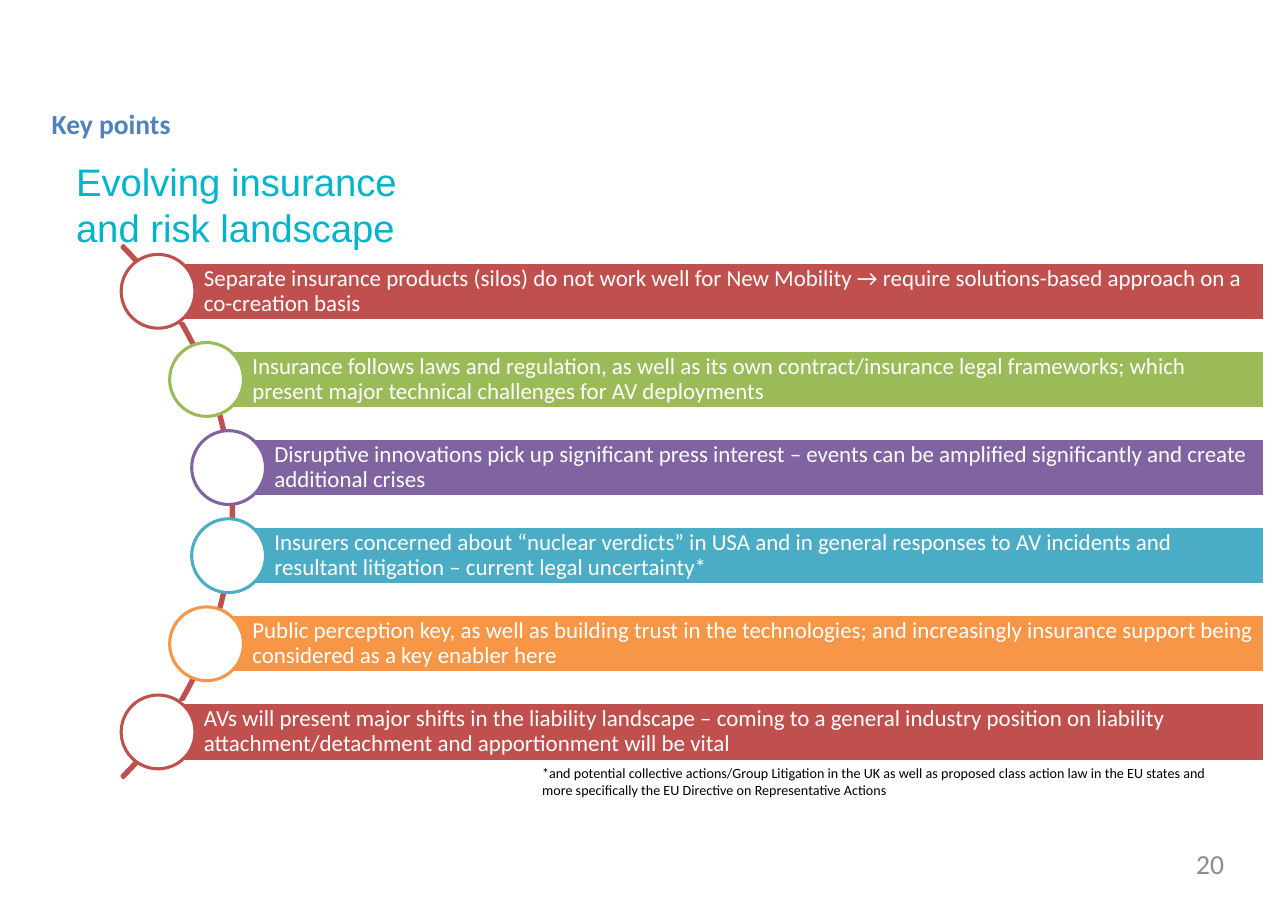
from pptx import Presentation
from pptx.dml.color import RGBColor
from pptx.enum.shapes import MSO_SHAPE
from pptx.enum.text import MSO_ANCHOR, PP_ALIGN
from pptx.util import Emu, Pt

SCALE = 9144
RED = "C0504D"
WHITE = "FFFFFF"
POINTS = [
    (0, RED, "Separate insurance products (silos) do not work well for New Mobility → require solutions-based approach on a co-creation basis"),
    (44, "9BBB59", "Insurance follows laws and regulation, as well as its own contract/insurance legal frameworks; which present major technical challenges for AV deployments"),
    (64, "8064A2", "Disruptive innovations pick up significant press interest – events can be amplified significantly and create additional crises"),
    (64, "4BACC6", "Insurers concerned about “nuclear verdicts” in USA and in general responses to AV incidents and resultant litigation – current legal uncertainty*"),
    (44, "F79646", "Public perception key, as well as building trust in the technologies; and increasingly insurance support being considered as a key enabler here"),
    (0, RED, "AVs will present major shifts in the liability landscape – coming to a general industry position on liability attachment/detachment and apportionment will be vital"),
]
NOTE = "*and potential collective actions/Group Litigation in the UK as well as proposed class action law in the EU states and more specifically the EU Directive on Representative Actions"


def px(count):
    """Turn px into EMU."""
    return Emu(count * SCALE)


def color(code):
    """Turn a hex string into a colour."""
    return RGBColor.from_string(code)


def write(shape, text, size, code, font="Calibri", bold=False,
          align=PP_ALIGN.LEFT, pads=(0, 0, 0, 0)):
    """Put one formatted paragraph into a shape."""
    frame = shape.text_frame
    frame.text = text
    frame.word_wrap = True
    frame.margin_left, frame.margin_top, frame.margin_right, frame.margin_bottom = map(px, pads)
    para = frame.paragraphs[0]
    para.alignment = align
    face = para.runs[0].font
    face.name, face.size, face.bold = font, Pt(size), bold
    face.color.rgb = color(code)
    return frame


def label(slide, box, text, size, code, **style):
    """Add a text box."""
    write(slide.shapes.add_textbox(*map(px, box)), text, size, code, **style)


def draw(slide, kind, box, fill, line):
    """Add a preset shape with a two-point line."""
    shape = slide.shapes.add_shape(kind, *map(px, box))
    shape.shadow.inherit = False
    if fill:
        shape.fill.solid()
        shape.fill.fore_color.rgb = color(fill)
    else:
        shape.fill.background()
    shape.line.color.rgb = color(line)
    shape.line.width = Pt(2)
    return shape


def point(slide, box, code, text):
    """Add a bar with its text and the circle on its left end."""
    left, top, wide, high = box
    bar = draw(slide, MSO_SHAPE.RECTANGLE, box, code, WHITE)
    frame = write(bar, text, 15, WHITE, pads=(42, 4, 4, 4))
    frame.vertical_anchor = MSO_ANCHOR.MIDDLE
    frame.paragraphs[0].line_spacing = 0.9
    size = high + 14
    draw(slide, MSO_SHAPE.OVAL, (left - size // 2, top - 7, size, size), WHITE, code)


def curve(slide, box):
    """Add the arc and the points strung along it."""
    left, top, wide, high = box
    arc = draw(slide, MSO_SHAPE.BLOCK_ARC, (left - 614, top - 115, 683, 683), None, RED)
    for index, value in enumerate((189, 27, 0.003)):
        arc.adjustments[index] = value
    pitch = high // len(POINTS)
    for row, (inset, code, text) in enumerate(POINTS):
        point(slide, (left + inset, top + row * pitch, wide - inset, 53), code, text)


def header(slide, box):
    """Add the section name and the title."""
    left, top, wide, high = box
    label(slide, (left, top, wide, 30), "Key points", 18, "4F81BD", bold=True)
    label(slide, (left + 22, top + 47, 352, high - 47),
          "Evolving insurance and risk landscape", 25, "00B4C9", font="Arial")


def footer(slide, box):
    """Add the footnote and the page number."""
    left, top, wide, high = box
    label(slide, (left, top, 604, 31), NOTE, 9.2, "000000")
    label(slide, (left + wide - 269, top + high - 30, 269, 30), "20", 18, "8C8C8C",
          align=PP_ALIGN.RIGHT)


def main():
    """Build and save the slide."""
    deck = Presentation()
    deck.slide_width, deck.slide_height = px(1169), px(827)
    slide = deck.slides.add_slide(deck.slide_layouts[6])
    header(slide, (47, 97, 1077, 131))
    curve(slide, (143, 238, 1005, 480))
    footer(slide, (492, 694, 619, 105))
    deck.save("out.pptx")


if __name__ == "__main__":
    main()
